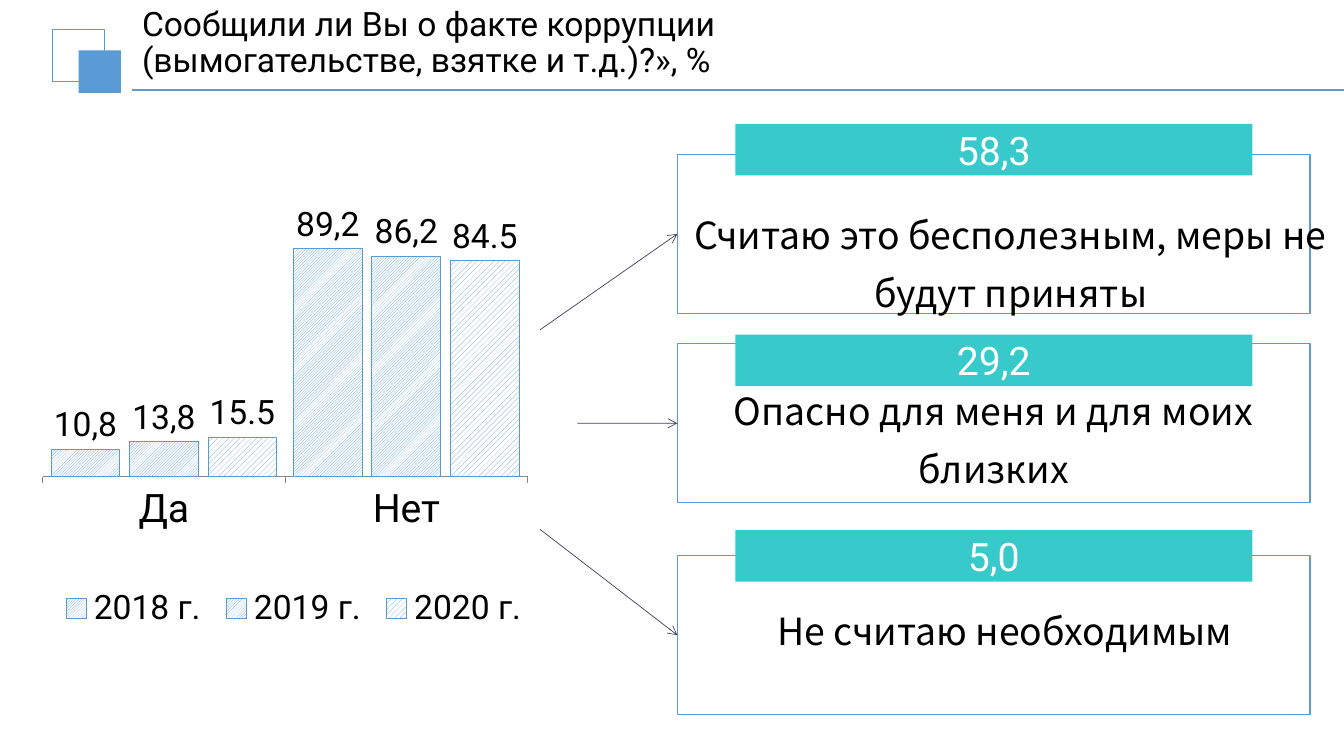
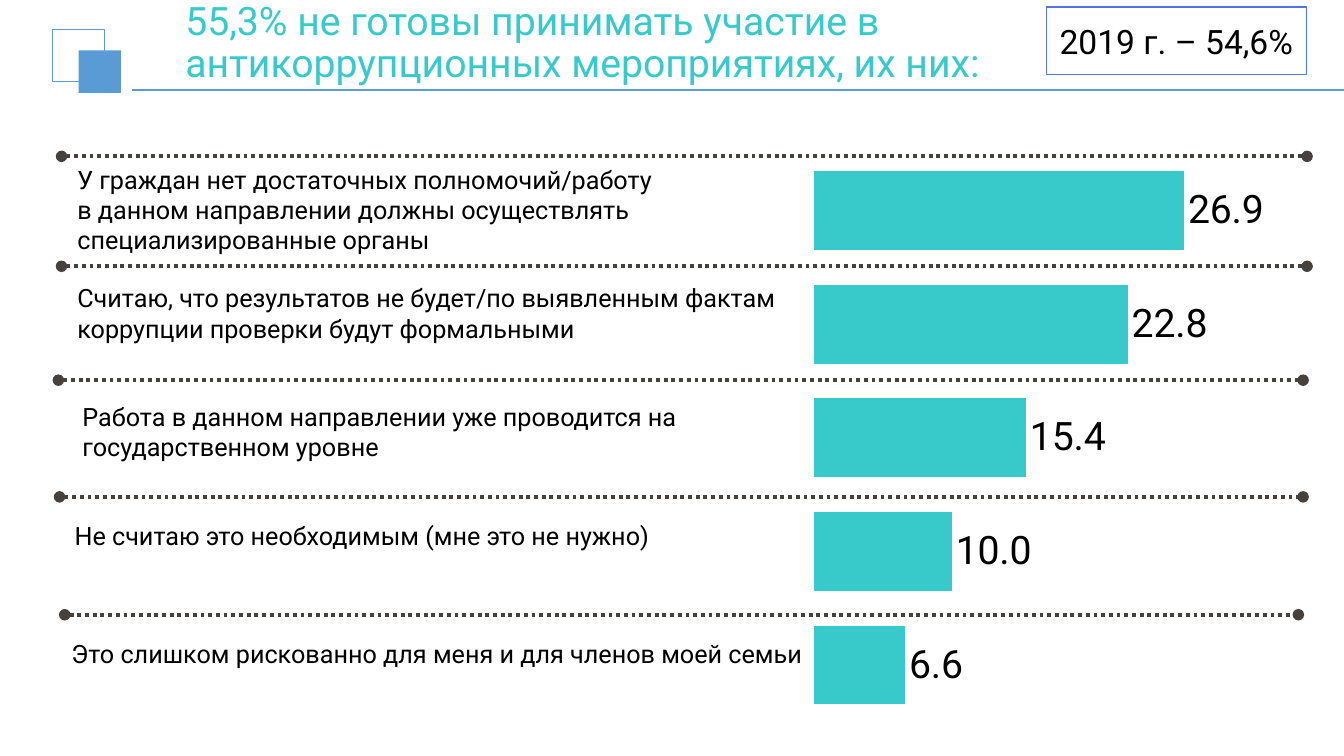
import pptx
import pptx.chart.data
import pptx.dml.color
import pptx.enum.chart
import pptx.enum.dml
import pptx.enum.shapes
import pptx.enum.text
import pptx.oxml.ns
import pptx.oxml.xmlchemy
import pptx.util
from dataclasses import dataclass
from pptx.util import Cm, Pt

ALIGN = pptx.enum.text.PP_ALIGN
ANCHOR = pptx.enum.text.MSO_ANCHOR
CHART = pptx.enum.chart
PATTERN = pptx.enum.dml.MSO_PATTERN
RECTANGLE = pptx.enum.shapes.MSO_SHAPE.RECTANGLE
STRAIGHT = pptx.enum.shapes.MSO_CONNECTOR.STRAIGHT
qn = pptx.oxml.ns.qn
new_element = pptx.oxml.xmlchemy.OxmlElement


@dataclass(frozen=True)
class Theme:
    blue: str = "5B9BD5"
    royal: str = "4E75E0"
    teal: str = "38CACB"
    ink: str = "000000"
    paper: str = "FFFFFF"
    arrow: str = "414455"
    dots: str = "47413E"
    axis: str = "878787"
    font: str = "Roboto"
    reason_font: str = "Noto Sans CJK SC"
    large: float = 28
    reason: float = 26.7
    medium: float = 24
    small: float = 18


THEME = Theme()
WIDTH, HEIGHT = 33.87, 19.05

REPORT_TITLE = "Сообщили ли Вы о факте коррупции\v(вымогательстве, взятке и т.д.)?», %"
ANSWERS = ["Да", "Нет"]
# year, values, pattern, labels written by hand
YEARS = [
    ("2018 г.", (10.8, 89.2), PATTERN.DARK_UPWARD_DIAGONAL, ("10,8", "89,2")),
    ("2019 г.", (13.8, 86.2), PATTERN.LIGHT_UPWARD_DIAGONAL, ("13,8", "86,2")),
    ("2020 г.", (15.5, 84.5), PATTERN.WIDE_UPWARD_DIAGONAL, ()),
]
# share, reason, card top, band top, reason left and top, arrow start (None: level with the card)
REASONS = [
    ("58,3", "Считаю это бесполезным, меры не будут приняты", 3.89, 3.12, (17.07, 4.88), (13.61, 8.31)),
    ("29,2", "Опасно для меня и для моих близких", 8.66, 8.43, (16.64, 9.32), (14.55, None)),
    ("5,0", "Не считаю необходимым", 14, 13.36, (16.92, 14.86), (13.61, 13.34)),
]
CARD_LEFT, CARD_WIDTH, CARD_HEIGHT = 17.07, 15.95, 4.01
BAND_LEFT, BAND_WIDTH, BAND_HEIGHT = 18.53, 13.03, 1.3
REASON_WIDTH = 16.81

REFUSAL_TITLE = "55,3% не готовы принимать участие в антикоррупционных мероприятиях, их них:"
LAST_YEAR = "2019 г. – 54,6%"
# text, value, left and width of the text, dotted line above it (left, right, y)
REFUSALS = [
    ("У граждан нет достаточных полномочий/работу\n"
     "в данном направлении должны осуществлять специализированные органы",
     26.9, (1.7, 19.2), (1.55, 32.94, 3.94)),
    ("Считаю, что результатов не будет/по выявленным фактам коррупции проверки будут формальными",
     22.8, (1.7, 19.96), (1.55, 32.94, 6.71)),
    ("Работа в данном направлении уже проводится на государственном уровне",
     15.4, (1.83, 17.91), (1.47, 32.84, 9.58)),
    ("Не считаю это необходимым (мне это не нужно)",
     10.0, (1.63, 20.75), (1.5, 32.84, 12.52)),
    ("Это слишком рискованно для меня и для членов моей семьи",
     6.6, (1.55, 19.46), (1.63, 32.72, 15.49)),
]
REFUSAL_TOP, REFUSAL_STEP = 4.01, 2.99


def color(value):
    return pptx.dml.color.RGBColor.from_string(value)


def style_font(font, size, tint=THEME.ink, name=THEME.font):
    font.size, font.name = Pt(size), name
    font.color.rgb = color(tint)


def write(shape, text, size, tint=THEME.ink, name=THEME.font, align=ALIGN.LEFT,
          anchor=ANCHOR.TOP, spacing=None):
    frame = shape.text_frame
    frame.word_wrap = True
    frame.vertical_anchor = anchor
    frame.text = text
    for para in frame.paragraphs:
        para.alignment = align
        if spacing:
            para.line_spacing = spacing
        for span in para.runs:
            style_font(span.font, size, tint, name)


def add_text(page, left, top, width, height, text, size, **style):
    box = page.shapes.add_textbox(Cm(left), Cm(top), Cm(width), Cm(height))
    write(box, text, size, **style)


def add_box(page, left, top, width, height, fill=None, line=None, weight=1):
    box = page.shapes.add_shape(RECTANGLE, Cm(left), Cm(top), Cm(width), Cm(height))
    box.shadow.inherit = False
    if fill:
        box.fill.solid()
        box.fill.fore_color.rgb = color(fill)
    else:
        box.fill.background()
    if line:
        box.line.color.rgb = color(line)
        box.line.width = Pt(weight)
    else:
        box.line.fill.background()
    return box


def add_line(page, start, end, tint, weight, dash=None, head=None, tail=None):
    line = page.shapes.add_connector(STRAIGHT, *(Cm(value) for value in (*start, *end)))
    line.line.color.rgb = color(tint)
    line.line.width = Pt(weight)
    if dash:
        line.line.dash_style = dash
    properties = line.element.spPr
    outline = properties.find(qn("a:ln"))
    for tag, kind in (("a:headEnd", head), ("a:tailEnd", tail)):
        if kind:
            mark = new_element(tag)
            mark.set("type", kind)
            outline.append(mark)
    properties.append(new_element("a:effectLst"))
    return line


def place_part(parent, index, inner=False, **fractions):
    """Give a plot area or legend a fixed place, in fractions of the chart."""
    for old in parent.findall(qn("c:layout")):
        parent.remove(old)
    layout = new_element("c:layout")
    manual = new_element("c:manualLayout")
    settings = [("layoutTarget", "inner")] if inner else []
    settings += [("xMode", "edge"), ("yMode", "edge"), *fractions.items()]
    for tag, value in settings:
        item = new_element("c:" + tag)
        item.set("val", str(value))
        manual.append(item)
    layout.append(manual)
    parent.insert(index, layout)


def add_bars(page, kind, frame, categories, series, maximum, gap, plot_place):
    data = pptx.chart.data.CategoryChartData()
    data.categories = categories
    for name, values in series:
        data.add_series(name, values)
    chart = page.shapes.add_chart(kind, *(Cm(value) for value in frame), data).chart
    style_font(chart.font, THEME.small)
    chart.has_title = chart.has_legend = False
    axis = chart.value_axis
    axis.minimum_scale, axis.maximum_scale = 0, maximum
    axis.has_major_gridlines = axis.visible = False
    plot = chart.plots[0]
    plot.gap_width = gap
    plot.vary_by_categories = False
    place_part(chart.element.find(".//" + qn("c:plotArea")), 0, inner=True,
               **dict(zip("xywh", plot_place)))
    return chart


def label_series(series, size):
    labels = series.data_labels
    labels.show_value = True
    labels.number_format = "#,##0.0"
    labels.number_format_is_linked = False
    labels.position = CHART.XL_LABEL_POSITION.OUTSIDE_END
    style_font(labels.font, size)


def add_page(deck, title, left, size, tint):
    """Add a slide with the corner squares, the rule and a title."""
    page = deck.slides.add_slide(deck.slide_layouts[6])
    add_box(page, 1.32, 0.74, 1.32, 1.32, line=THEME.blue, weight=0.75)
    add_box(page, 1.98, 1.27, 1.07, 1.07, fill=THEME.blue)
    add_line(page, (3.33, 2.26), (WIDTH, 2.26), THEME.blue, 1.25)
    add_text(page, left, 0.37, 24.03, 1.47, title, size, tint=tint,
             anchor=ANCHOR.MIDDLE, spacing=0.9)
    return page


def add_year_chart(page):
    chart = add_bars(page, CHART.XL_CHART_TYPE.COLUMN_CLUSTERED, (0.05, 3.71, 13.87, 13.06),
                     ANSWERS, [year[:2] for year in YEARS], 100, 24,
                     (0.074, 0.142, 0.881, 0.494))
    chart.plots[0].overlap = -14
    axis = chart.category_axis
    axis.major_tick_mark = CHART.XL_TICK_MARK.OUTSIDE
    axis.format.line.color.rgb = color(THEME.axis)
    style_font(axis.tick_labels.font, THEME.large)
    chart.has_legend = True
    legend = chart.legend
    legend.position = CHART.XL_LEGEND_POSITION.BOTTOM
    legend.include_in_layout = False
    style_font(legend.font, THEME.medium)
    place_part(chart.element.find(".//" + qn("c:legend")), 1, x=0.09, y=0.84, w=0.88, h=0.1)

    for series, (_, _, pattern, texts) in zip(chart.plots[0].series, YEARS):
        fill = series.format.fill
        fill.patterned()
        fill.pattern = pattern
        fill.fore_color.rgb = color(THEME.blue)
        fill.back_color.rgb = color(THEME.paper)
        series.format.line.color.rgb = color(THEME.blue)
        series.format.line.width = Pt(0.5)
        label_series(series, THEME.medium)
        for index, text in enumerate(texts):
            label = series.points[index].data_label
            label.text_frame.text = text
            style_font(label.text_frame.paragraphs[0].runs[0].font, THEME.medium)
            label.position = CHART.XL_LABEL_POSITION.OUTSIDE_END


def build_report_page(deck):
    page = add_page(deck, REPORT_TITLE, 3.33, THEME.medium, THEME.ink)
    for share, reason, card_top, band_top, place, (start_x, start_y) in REASONS:
        card = add_box(page, CARD_LEFT, card_top, CARD_WIDTH, CARD_HEIGHT,
                       fill=THEME.paper, line=THEME.blue)
        band = add_box(page, BAND_LEFT, band_top, BAND_WIDTH, BAND_HEIGHT, fill=THEME.teal)
        write(band, share, THEME.large, THEME.paper, align=ALIGN.CENTER, anchor=ANCHOR.MIDDLE)
        add_text(page, *place, REASON_WIDTH, 3, reason, THEME.reason,
                 name=THEME.reason_font, align=ALIGN.CENTER, spacing=1.3)
        middle = card_top + CARD_HEIGHT / 2
        arrow = add_line(page, (start_x, start_y or middle), (CARD_LEFT, middle),
                         THEME.arrow, 0.5, tail="arrow")
        arrow.end_connect(card, 1)
    add_year_chart(page)


def build_refusal_page(deck):
    page = add_page(deck, REFUSAL_TITLE, 4.42, THEME.large, THEME.teal)
    values = [refusal[1] for refusal in reversed(REFUSALS)]
    chart = add_bars(page, CHART.XL_CHART_TYPE.BAR_CLUSTERED, (11.71, 3.66, 21.34, 14.53),
                     ["1", "2", "3", "4", "5"], [("Series 1", values)], 30, 44,
                     (0.413, 0.015, 0.487, 0.985))
    chart.category_axis.visible = False
    series = chart.plots[0].series[0]
    series.format.fill.solid()
    series.format.fill.fore_color.rgb = color(THEME.teal)
    label_series(series, THEME.large)

    for row, (text, _, (left, width), (start, end, y)) in enumerate(REFUSALS):
        add_text(page, left, REFUSAL_TOP + row * REFUSAL_STEP, width, 1.8, text, THEME.small)
        add_line(page, (start, y), (end, y), THEME.dots, 2.75,
                 dash=pptx.enum.dml.MSO_LINE.ROUND_DOT, head="oval", tail="oval")
    badge = add_box(page, 26.37, 0.18, 6.55, 1.7, line=THEME.royal)
    write(badge, LAST_YEAR, THEME.medium, align=ALIGN.CENTER, anchor=ANCHOR.MIDDLE)


def main():
    deck = pptx.Presentation()
    deck.slide_width, deck.slide_height = Cm(WIDTH), Cm(HEIGHT)
    build_report_page(deck)
    build_refusal_page(deck)
    deck.save("out.pptx")


if __name__ == "__main__":
    main()
